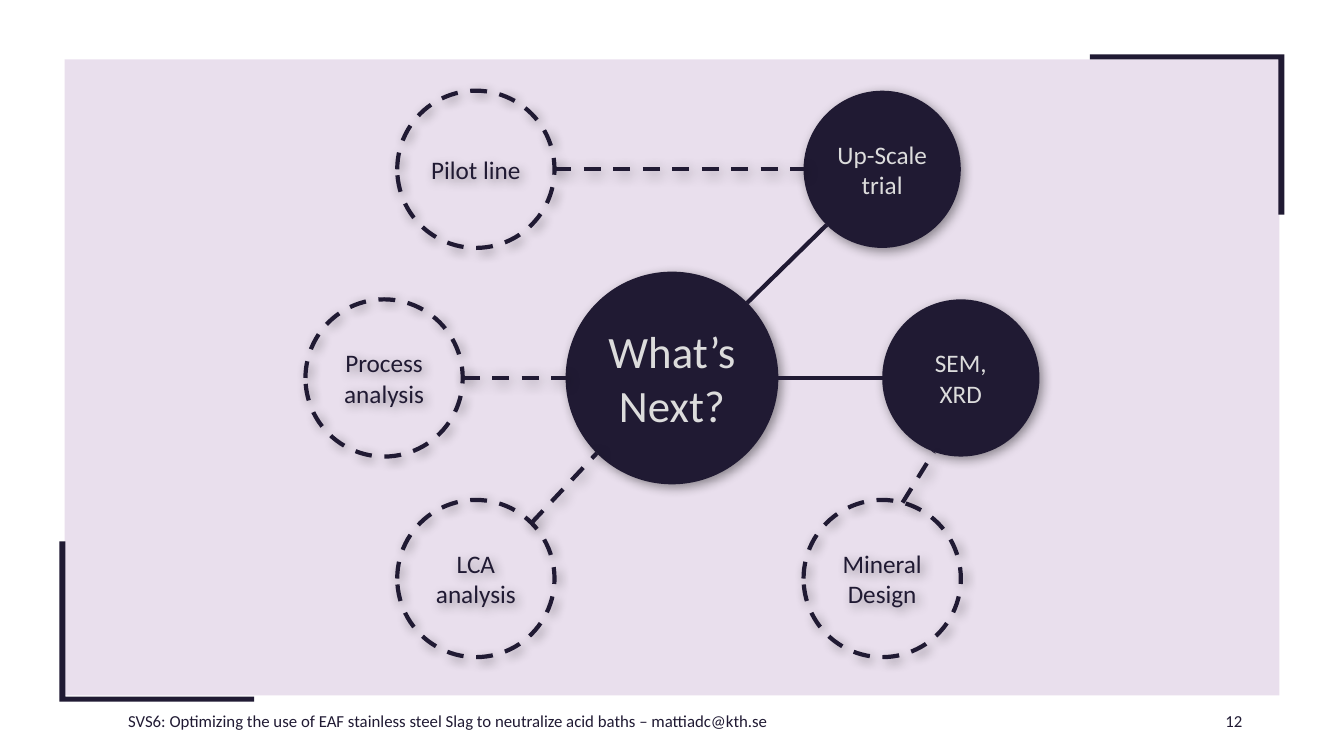
import math

from lxml import etree
from pptx import Presentation
from pptx.dml.color import RGBColor
from pptx.enum import dml, shapes, text
from pptx.oxml import ns
from pptx.util import Inches, Pt

INK = RGBColor(0x20, 0x1A, 0x33)
MAUVE = RGBColor(0x92, 0x63, 0xA9)
PALE = RGBColor(0xDC, 0xDC, 0xDC)
FONT = "Calibri"
SLIDE_W, SLIDE_H = 13.33, 7.5
HUB_RADIUS, NODE_RADIUS = 1.055, 0.78

# name: (centre x, centre y, radius, lines, text size, still planned)
BUBBLES = {
    "hub": (6.665, 3.75, HUB_RADIUS, ["What’s", "Next?"], 32, False),
    "upscale": (8.75, 1.68, NODE_RADIUS, ["Up-Scale trial"], 18, False),
    "sem": (9.53, 3.75, NODE_RADIUS, ["SEM, XRD"], 18, False),
    "process": (3.81, 3.75, NODE_RADIUS, ["Process analysis"], 18, True),
    "lca": (4.72, 5.74, NODE_RADIUS, ["LCA", "analysis"], 18, True),
    "pilot": (4.72, 1.68, NODE_RADIUS, ["Pilot line"], 18, True),
    "mineral": (8.75, 5.74, NODE_RADIUS, ["Mineral", "Design"], 18, True),
}
# (from, angle, to, angle, still planned), degrees counterclockwise from the right
LINKS = [
    ("hub", 45, "upscale", 225, False),
    ("hub", 0, "sem", 180, False),
    ("process", 0, "hub", 180, True),
    ("lca", 45, "hub", 225, True),
    ("pilot", 0, "upscale", 180, True),
    ("mineral", 75, "sem", 250, True),
]


def set_shadow(shape, blur=None):
    """Give the shape an outer shadow of that blur, or none at all."""
    properties = shape._element.spPr
    effects = etree.SubElement(properties, ns.qn("a:effectLst"))
    if blur:
        shadow = etree.SubElement(
            effects, ns.qn("a:outerShdw"), blurRad=str(Pt(blur)), dist=str(Pt(3)),
            dir="2700000", algn="tl", rotWithShape="0")
        black = etree.SubElement(shadow, ns.qn("a:srgbClr"), val="000000")
        etree.SubElement(black, ns.qn("a:alpha"), val="40000")


def set_line(line, planned):
    line.color.rgb = INK
    line.width = Pt(3)
    if planned:
        line.dash_style = dml.MSO_LINE.DASH


def write(frame, lines, size, color, align):
    frame.word_wrap = True
    frame.vertical_anchor = text.MSO_ANCHOR.MIDDLE
    frame.text = "\n".join(lines)
    for paragraph in frame.paragraphs:
        paragraph.alignment = align
        for run in paragraph.runs:
            run.font.name = FONT
            run.font.size = Pt(size)
            run.font.color.rgb = color


def add_panel(slide):
    panel = slide.shapes.add_shape(
        shapes.MSO_SHAPE.RECTANGLE,
        Inches(0.64), Inches(0.59), Inches(12.05), Inches(6.31))
    panel.shadow.inherit = False
    panel.fill.solid()
    panel.fill.fore_color.rgb = MAUVE
    color = panel._element.spPr.find(".//" + ns.qn("a:srgbClr"))
    etree.SubElement(color, ns.qn("a:alpha"), val="20000")
    panel.line.fill.background()


def add_bracket(slide, points):
    start, *rest = [(Inches(x), Inches(y)) for x, y in points]
    builder = slide.shapes.build_freeform(*start)
    builder.add_line_segments(rest, close=True)
    bracket = builder.convert_to_shape()
    bracket.shadow.inherit = False
    bracket.fill.solid()
    bracket.fill.fore_color.rgb = INK
    bracket.line.fill.background()


def add_footer(slide, left, width, words, align):
    box = slide.shapes.add_textbox(
        Inches(left), Inches(6.95), Inches(width), Inches(0.4))
    write(box.text_frame, [words], 12, INK, align)


def add_bubble(slide, x, y, radius, lines, size, planned):
    bubble = slide.shapes.add_shape(
        shapes.MSO_SHAPE.OVAL, Inches(x - radius), Inches(y - radius),
        Inches(2 * radius), Inches(2 * radius))
    if planned:
        bubble.fill.background()
        set_line(bubble.line, planned)
    else:
        bubble.fill.solid()
        bubble.fill.fore_color.rgb = INK
        bubble.line.fill.background()
    set_shadow(bubble, blur=8)
    write(bubble.text_frame, lines, size, INK if planned else PALE,
          text.PP_ALIGN.CENTER)


def rim_point(name, degrees):
    """Point on the edge of a bubble."""
    x, y, radius = BUBBLES[name][:3]
    angle = math.radians(degrees)
    return (Inches(x + radius * math.cos(angle)),
            Inches(y - radius * math.sin(angle)))


def add_link(slide, start, start_angle, end, end_angle, planned):
    link = slide.shapes.add_connector(
        shapes.MSO_CONNECTOR.STRAIGHT,
        *rim_point(start, start_angle), *rim_point(end, end_angle))
    set_line(link.line, planned)
    set_shadow(link, blur=10 if planned else None)


def main():
    deck = Presentation()
    deck.slide_width, deck.slide_height = Inches(SLIDE_W), Inches(SLIDE_H)
    slide = deck.slides.add_slide(deck.slide_layouts[6])

    add_panel(slide)
    top_right = [(12.74, 0.54), (10.81, 0.54), (10.81, 0.59),
                 (12.68, 0.59), (12.68, 2.13), (12.74, 2.13)]
    add_bracket(slide, top_right)
    add_bracket(slide, [(SLIDE_W - x, SLIDE_H - y) for x, y in top_right])

    add_footer(slide, 0.92, 7.05,
               "SVS6: Optimizing the use of EAF stainless steel Slag to "
               "neutralize acid baths – mattiadc@kth.se", text.PP_ALIGN.CENTER)
    add_footer(slide, 11.53, 0.89, "12", text.PP_ALIGN.RIGHT)

    for bubble in BUBBLES.values():
        add_bubble(slide, *bubble)
    for link in LINKS:
        add_link(slide, *link)
    deck.save("out.pptx")


if __name__ == "__main__":
    main()
